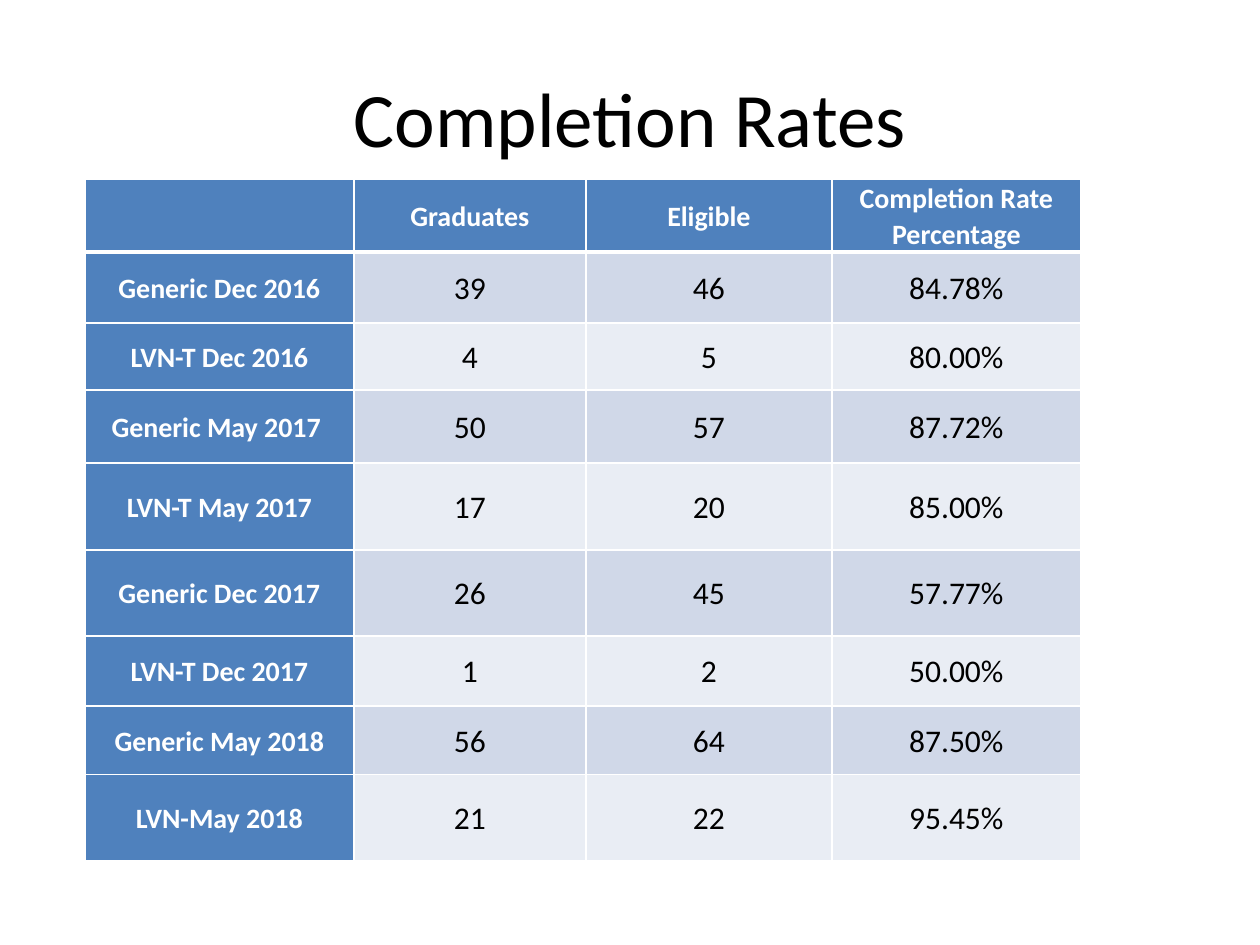
from dataclasses import dataclass

from pptx import Presentation
from pptx.dml.color import RGBColor
from pptx.enum.text import MSO_ANCHOR as Anchor, PP_ALIGN as Align
from pptx.oxml.ns import qn
from pptx.util import Emu, Pt
from lxml.etree import SubElement

PX = 914400 / 126
FONT = "Calibri"
COLORS = {
    "head": "4F81BD",
    "band_dark": "D0D8E8",
    "band_light": "E9EDF4",
    "white": "FFFFFF",
    "black": "000000",
}


@dataclass(frozen=True)
class TextStyle:
    size: int
    color: str
    bold: bool = False


@dataclass(frozen=True)
class Rate:
    group: str
    graduates: str
    eligible: str
    percentage: str
    height: int

    def texts(self) -> tuple:
        return self.group, self.graduates, self.eligible, self.percentage


TITLE = TextStyle(44, "black")
LABEL = TextStyle(16, "white", True)
VALUE = TextStyle(18, "black")

COL_WIDTHS = (269, 232, 246, 249)
RATES = (
    Rate("", "Graduates", "Eligible", "Completion Rate Percentage", 73),
    Rate("Generic Dec 2016", "39", "46", "84.78%", 71),
    Rate("LVN-T Dec 2016", "4", "5", "80.00%", 67),
    Rate("Generic May 2017 ", "50", "57", "87.72%", 73),
    Rate("LVN-T May 2017", "17", "20", "85.00%", 87),
    Rate("Generic Dec 2017", "26", "45", "57.77%", 86),
    Rate("LVN-T Dec 2017", "1", "2", "50.00%", 70),
    Rate("Generic May 2018", "56", "64", "87.50%", 69),
    Rate("LVN-May 2018", "21", "22", "95.45%", 86),
)


def px(n: int) -> Emu:
    return Emu(round(n * PX))


def rgb(name: str) -> RGBColor:
    return RGBColor.from_string(COLORS[name])


def add_run(p, text: str, style: TextStyle) -> None:
    p.alignment = Align.CENTER
    r = p.add_run()
    r.text = text
    r.font.name = FONT
    r.font.size = Pt(style.size)
    r.font.bold = style.bold
    r.font.color.rgb = rgb(style.color)


def set_borders(cell, bottom: int) -> None:
    tc_pr = cell._tc.get_or_add_tcPr()
    for side, width in (("L", 1), ("R", 1), ("T", 1), ("B", bottom)):
        ln = SubElement(tc_pr, qn(f"a:ln{side}"), w=str(Pt(width)))
        fill = SubElement(ln, qn("a:solidFill"))
        SubElement(fill, qn("a:srgbClr"), val=COLORS["white"])


def fill_cell(cell, text: str, style: TextStyle, fill: str, bottom: int) -> None:
    set_borders(cell, bottom)
    cell.fill.solid()
    cell.fill.fore_color.rgb = rgb(fill)
    cell.vertical_anchor = Anchor.MIDDLE
    cell.margin_left = cell.margin_right = px(9)
    cell.margin_top = cell.margin_bottom = 0
    if text:
        p = cell.text_frame.paragraphs[0]
        p.line_spacing = 1.07
        p.space_after = Pt(8)
        add_run(p, text, style)


def add_title(s, text: str) -> None:
    tf = s.shapes.add_textbox(px(63), px(38), px(1134), px(157)).text_frame
    tf.word_wrap = True
    tf.vertical_anchor = Anchor.MIDDLE
    add_run(tf.paragraphs[0], text, TITLE)


def add_rates_table(s) -> None:
    height = sum(rate.height for rate in RATES)
    table = s.shapes.add_table(
        len(RATES), len(COL_WIDTHS),
        px(85), px(179), px(sum(COL_WIDTHS)), px(height),
    ).table
    for column, width in zip(table.columns, COL_WIDTHS):
        column.width = px(width)
    for i, rate in enumerate(RATES):
        table.rows[i].height = px(rate.height)
        band = "band_dark" if i % 2 else "band_light"
        for j, text in enumerate(rate.texts()):
            is_head = i == 0 or j == 0
            fill_cell(
                table.cell(i, j), text,
                LABEL if is_head else VALUE,
                "head" if is_head else band,
                bottom=1 if i else 3,
            )


def main() -> None:
    prs = Presentation()
    prs.slide_width, prs.slide_height = px(1260), px(945)
    s = prs.slides.add_slide(prs.slide_layouts[6])

    # Title
    add_title(s, "Completion Rates")

    # Table of graduates, eligible students and rates
    add_rates_table(s)

    prs.save("out.pptx")


if __name__ == "__main__":
    main()
